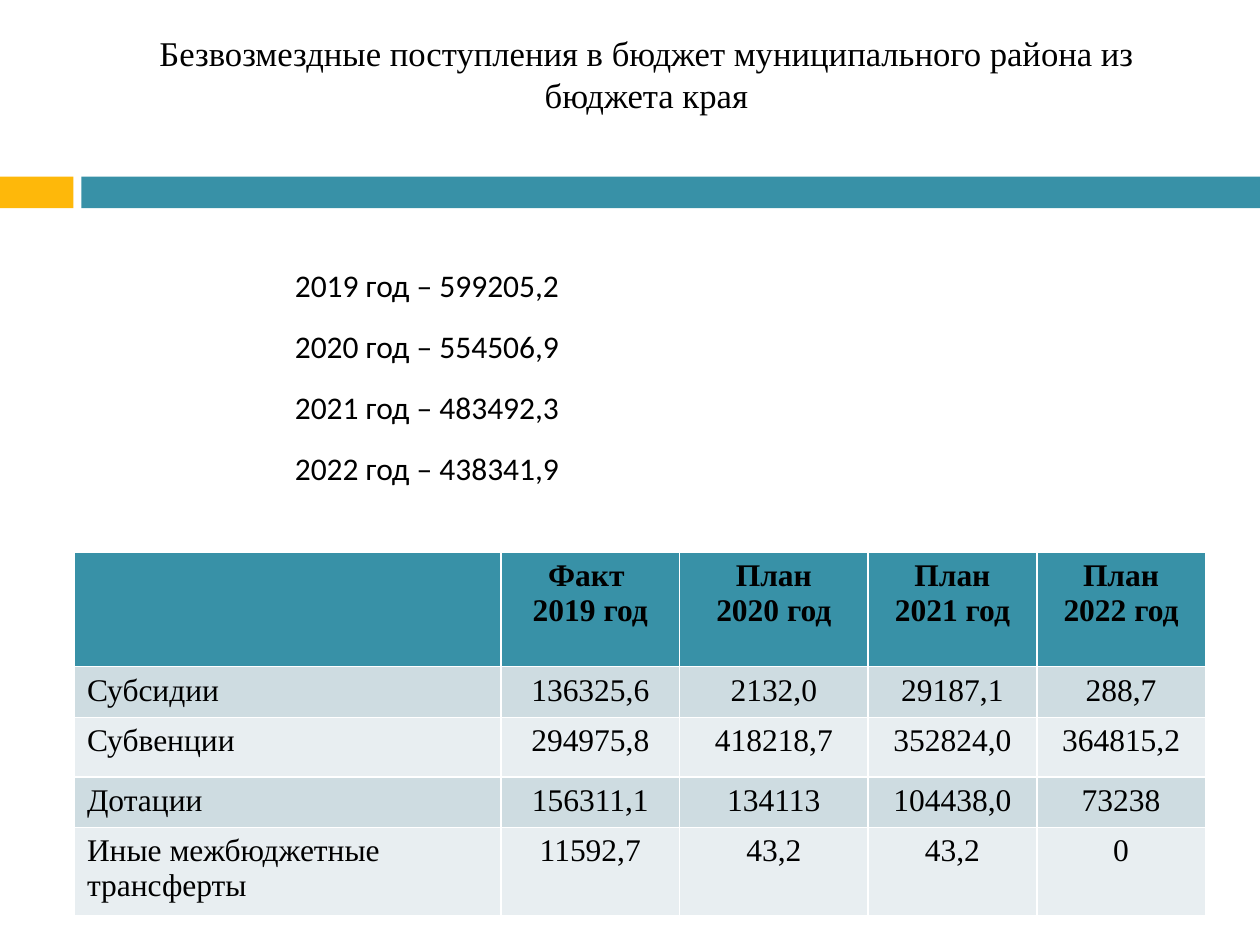
"""Build the slide on transfers from the regional budget to the district budget."""

from dataclasses import dataclass

from pptx import Presentation
from pptx.dml.color import RGBColor
from pptx.enum.shapes import MSO_SHAPE
from pptx.enum.text import MSO_ANCHOR, MSO_AUTO_SIZE, PP_ALIGN
from pptx.oxml.ns import qn
from pptx.util import Cm, Pt

TITLE = "Безвозмездные поступления в бюджет муниципального района из бюджета края"
TOTALS = [
    "2019 год – 599205,2",
    "2020 год – 554506,9",
    "2021 год – 483492,3",
    "2022 год – 438341,9",
]
ROWS = [
    ["", "Факт \n2019 год", "План\n2020 год", "План\n2021 год", "План\n2022 год"],
    ["Субсидии", "136325,6", "2132,0", "29187,1", "288,7"],
    ["Субвенции", "294975,8", "418218,7", "352824,0", "364815,2"],
    ["Дотации", "156311,1", "134113", "104438,0", "73238"],
    ["Иные межбюджетные трансферты", "11592,7", "43,2", "43,2", "0"],
]
WIDTHS = [8.6, 3.6, 3.8, 3.4, 3.4]
HEIGHTS = [2.31, 1.02, 1.2, 1.02, 1.78]
PAGE = (25.4, 19.05)


@dataclass(frozen=True)
class Theme:
    """Hold the colours, fonts and type sizes."""

    ink: str = "000000"
    teal: str = "3891A7"
    gold: str = "FEB80A"
    bands: tuple = ("E8EEF1", "CEDCE1")
    serif: str = "Times New Roman"
    sans: str = "Calibri"
    head: float = 19.8
    text: float = 18


THEME = Theme()


def paint(item, color):
    """Give a shape or cell a solid fill."""
    item.fill.solid()
    item.fill.fore_color.rgb = RGBColor.from_string(color)


def place(shape, left, top, width, height):
    """Set the frame of a shape in centimetres."""
    shape.left, shape.top = Cm(left), Cm(top)
    shape.width, shape.height = Cm(width), Cm(height)


def write(frame, lines, font, size, align=PP_ALIGN.LEFT, bold=False):
    """Write each line as a paragraph with one run."""
    for i, line in enumerate(lines):
        para = frame.add_paragraph() if i else frame.paragraphs[0]
        para.alignment = align
        run = para.add_run()
        run.text = line
        run.font.name, run.font.size, run.font.bold = font, Pt(size), bold
        run.font.color.rgb = RGBColor.from_string(THEME.ink)


def add_bar(slide, left, width, color):
    """Draw one part of the strip below the title."""
    bar = slide.shapes.add_shape(
        MSO_SHAPE.RECTANGLE, Cm(left), Cm(3.56), Cm(width), Cm(0.64)
    )
    bar.shadow.inherit = False
    bar.line.fill.background()
    paint(bar, color)


def fill_title(title):
    """Place and write the title."""
    place(title, 1.7, 0.64, 22.66, 1.7)
    frame = title.text_frame
    frame.auto_size = MSO_AUTO_SIZE.NONE
    frame.vertical_anchor = MSO_ANCHOR.MIDDLE
    write(frame, [TITLE], THEME.serif, THEME.head, PP_ALIGN.CENTER)


def fill_totals(body):
    """Place and write the yearly totals without bullets."""
    place(body, 5.69, 5.13, 12.7, 4.88)
    frame = body.text_frame
    frame.auto_size = MSO_AUTO_SIZE.NONE
    write(frame, TOTALS, THEME.sans, THEME.text)
    for para in frame.paragraphs:
        para.line_spacing = 1.15
        para.space_before, para.space_after = Pt(0), Pt(10)
        props = para._p.get_or_add_pPr()
        props.set("marL", "0")
        props.set("indent", "0")
        props.append(props.makeelement(qn("a:buNone"), {}))


def add_grid(slide):
    """Add the table of transfers by kind and year."""
    grid = slide.shapes.add_table(
        len(ROWS), len(WIDTHS), Cm(1.5), Cm(11.13), Cm(sum(WIDTHS)), Cm(sum(HEIGHTS))
    ).table
    for col, width in zip(grid.columns, WIDTHS):
        col.width = Cm(width)
    for r, (row, height) in enumerate(zip(ROWS, HEIGHTS)):
        grid.rows[r].height = Cm(height)
        for c, text in enumerate(row):
            cell = grid.cell(r, c)
            paint(cell, THEME.bands[r % 2] if r else THEME.teal)
            if text:
                align = PP_ALIGN.CENTER if c else PP_ALIGN.LEFT
                write(cell.text_frame, text.split("\n"), THEME.serif,
                      THEME.text, align, bold=r == 0)


def main():
    """Build and save the slide."""
    deck = Presentation()
    deck.slide_width, deck.slide_height = map(Cm, PAGE)
    slide = deck.slides.add_slide(deck.slide_layouts[1])
    add_bar(slide, 0, 1.48, THEME.gold)
    add_bar(slide, 1.64, PAGE[0] - 1.64, THEME.teal)
    fill_title(slide.shapes.title)
    fill_totals(slide.placeholders[1])
    add_grid(slide)
    deck.save("out.pptx")


if __name__ == "__main__":
    main()
